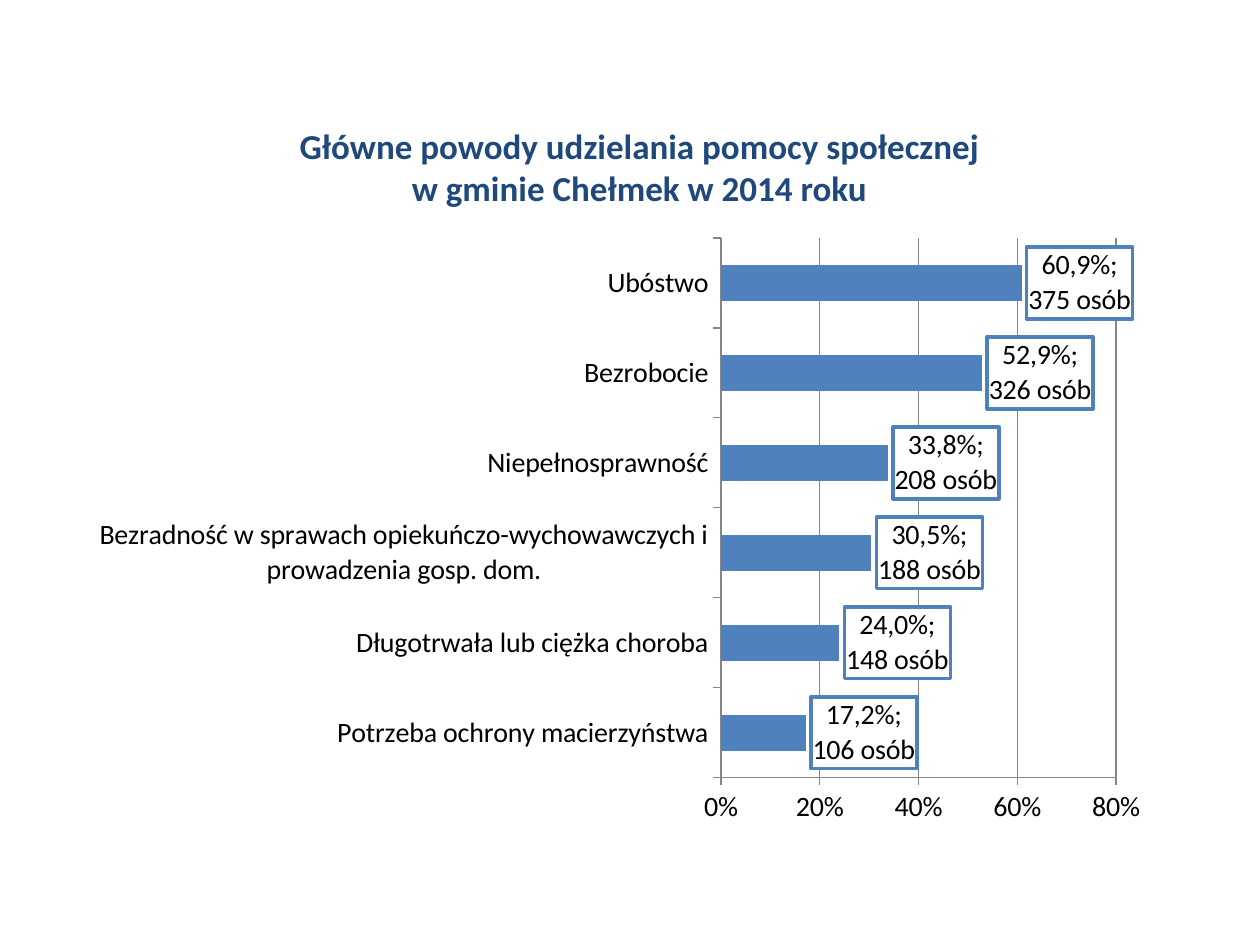
from dataclasses import dataclass

from lxml import etree
from pptx import Presentation
from pptx.chart.data import CategoryChartData
from pptx.chart.chart import Chart
from pptx.dml.color import RGBColor
from pptx.enum.chart import XL_CHART_TYPE as ChartType
from pptx.enum.chart import XL_LABEL_POSITION as LabelPosition
from pptx.enum.chart import XL_TICK_MARK as TickMark
from pptx.enum.text import MSO_ANCHOR as Anchor
from pptx.enum.text import PP_ALIGN as Align
from pptx.oxml import parse_xml
from pptx.oxml.ns import qn
from pptx.util import Emu, Pt

FONT = "Calibri"
BLUE = "4F81BD"
NAVY = "1F497D"
GREY = "868686"
BLACK = "000000"
WHITE = "FFFFFF"
NAMESPACES = (
    'xmlns:c="http://schemas.openxmlformats.org/drawingml/2006/chart" '
    'xmlns:a="http://schemas.openxmlformats.org/drawingml/2006/main"'
)


@dataclass(frozen=True)
class Frame:
    left: int
    top: int
    width: int
    height: int

    def emu(self) -> tuple:
        return tuple(px(n) for n in (self.left, self.top, self.width, self.height))


@dataclass(frozen=True)
class Reason:
    name: str
    share: float
    people: int

    def label_lines(self) -> list[str]:
        percent = f"{self.share:.1%}".replace(".", ",")
        return [f"{percent};", f"{self.people} osób"]


TITLE_FRAME = Frame(88, 118, 1103, 97)
CHART_FRAME = Frame(78, 227, 1082, 610)
PLOT_FRAME = Frame(721, 238, 395, 540)
TITLE_LINES = [
    "Główne powody udzielania pomocy społecznej",
    "w gminie Chełmek w 2014 roku",
]
REASONS = [
    Reason("Potrzeba ochrony macierzyństwa", 0.172, 106),
    Reason("Długotrwała lub ciężka choroba", 0.24, 148),
    Reason("Bezradność w sprawach opiekuńczo-wychowawczych i prowadzenia gosp. dom.", 0.305, 188),
    Reason("Niepełnosprawność", 0.338, 208),
    Reason("Bezrobocie", 0.529, 326),
    Reason("Ubóstwo", 0.609, 375),
]


def px(count: int) -> Emu:
    return Emu(round(count * 914400 / 126))


def color(value: str) -> RGBColor:
    return RGBColor.from_string(value)


def style_font(font, size: int, ink: str, bold: bool = False) -> None:
    font.name = FONT
    font.size = Pt(size)
    font.bold = bold
    font.color.rgb = color(ink)


def write_lines(text_frame, lines: list[str], size: int, ink: str, bold: bool = False) -> None:
    for index, line in enumerate(lines):
        para = text_frame.paragraphs[0] if index == 0 else text_frame.add_paragraph()
        para.alignment = Align.CENTER
        span = para.add_run()
        span.text = line
        style_font(span.font, size, ink, bold)


def add_title(page) -> None:
    box = page.shapes.add_textbox(*TITLE_FRAME.emu())
    box.text_frame.word_wrap = True
    box.text_frame.vertical_anchor = Anchor.TOP
    write_lines(box.text_frame, TITLE_LINES, 20, NAVY, bold=True)


def place_plot(chart: Chart) -> None:
    plot_area = chart.plots[0]._element.getparent()
    for old in plot_area.findall(qn("c:layout")):
        plot_area.remove(old)
    layout = parse_xml(
        f'<c:layout {NAMESPACES}><c:manualLayout><c:layoutTarget val="inner"/>'
        '<c:xMode val="edge"/><c:yMode val="edge"/></c:manualLayout></c:layout>'
    )
    values = {
        "x": (PLOT_FRAME.left - CHART_FRAME.left) / CHART_FRAME.width,
        "y": (PLOT_FRAME.top - CHART_FRAME.top) / CHART_FRAME.height,
        "w": PLOT_FRAME.width / CHART_FRAME.width,
        "h": PLOT_FRAME.height / CHART_FRAME.height,
    }
    for name, value in values.items():
        etree.SubElement(layout[0], qn(f"c:{name}")).set("val", f"{value:.4f}")
    plot_area.insert(0, layout)


def style_axes(chart: Chart) -> None:
    shares = chart.value_axis
    shares.minimum_scale, shares.maximum_scale = 0, 0.8
    shares.major_unit = 0.2
    shares.has_major_gridlines = True
    shares.tick_labels.number_format = "0%"
    shares.tick_labels.number_format_is_linked = False
    for axis in (chart.category_axis, shares):
        axis.major_tick_mark = TickMark.OUTSIDE
        axis.minor_tick_mark = TickMark.NONE
        style_font(axis.tick_labels.font, 16, BLACK)
    for line in (chart.category_axis.format.line, shares.format.line, shares.major_gridlines.format.line):
        line.color.rgb = color(GREY)
        line.width = Pt(0.75)


def add_label(point, reason: Reason) -> None:
    label = point.data_label
    write_lines(label.text_frame, reason.label_lines(), 16, BLACK)
    label.position = LabelPosition.OUTSIDE_END
    border = parse_xml(
        f'<c:spPr {NAMESPACES}><a:solidFill><a:srgbClr val="{WHITE}"/></a:solidFill>'
        f'<a:ln w="{Pt(2)}"><a:solidFill><a:srgbClr val="{BLUE}"/></a:solidFill></a:ln></c:spPr>'
    )
    label.text_frame._element.getparent().addnext(border)


def add_reasons_chart(page) -> None:
    data = CategoryChartData(number_format="0.0%")
    data.categories = [reason.name for reason in REASONS]
    data.add_series("Series 1", [reason.share for reason in REASONS])
    chart = page.shapes.add_chart(ChartType.BAR_CLUSTERED, *CHART_FRAME.emu(), data).chart
    chart.has_legend = False
    chart.has_title = False
    style_font(chart.font, 16, BLACK)
    style_axes(chart)
    place_plot(chart)
    plot = chart.plots[0]
    plot.gap_width = 150
    plot.vary_by_categories = False
    series = plot.series[0]
    series.format.fill.solid()
    series.format.fill.fore_color.rgb = color(BLUE)
    series.data_labels.show_value = True
    series.data_labels.number_format = "0.0%"
    series.data_labels.number_format_is_linked = False
    for index, reason in enumerate(REASONS):
        add_label(series.points[index], reason)


def main() -> None:
    deck = Presentation()
    deck.slide_width, deck.slide_height = px(1260), px(945)
    page = deck.slides.add_slide(deck.slide_layouts[6])
    add_reasons_chart(page)
    add_title(page)
    deck.save("out.pptx")


if __name__ == "__main__":
    main()
